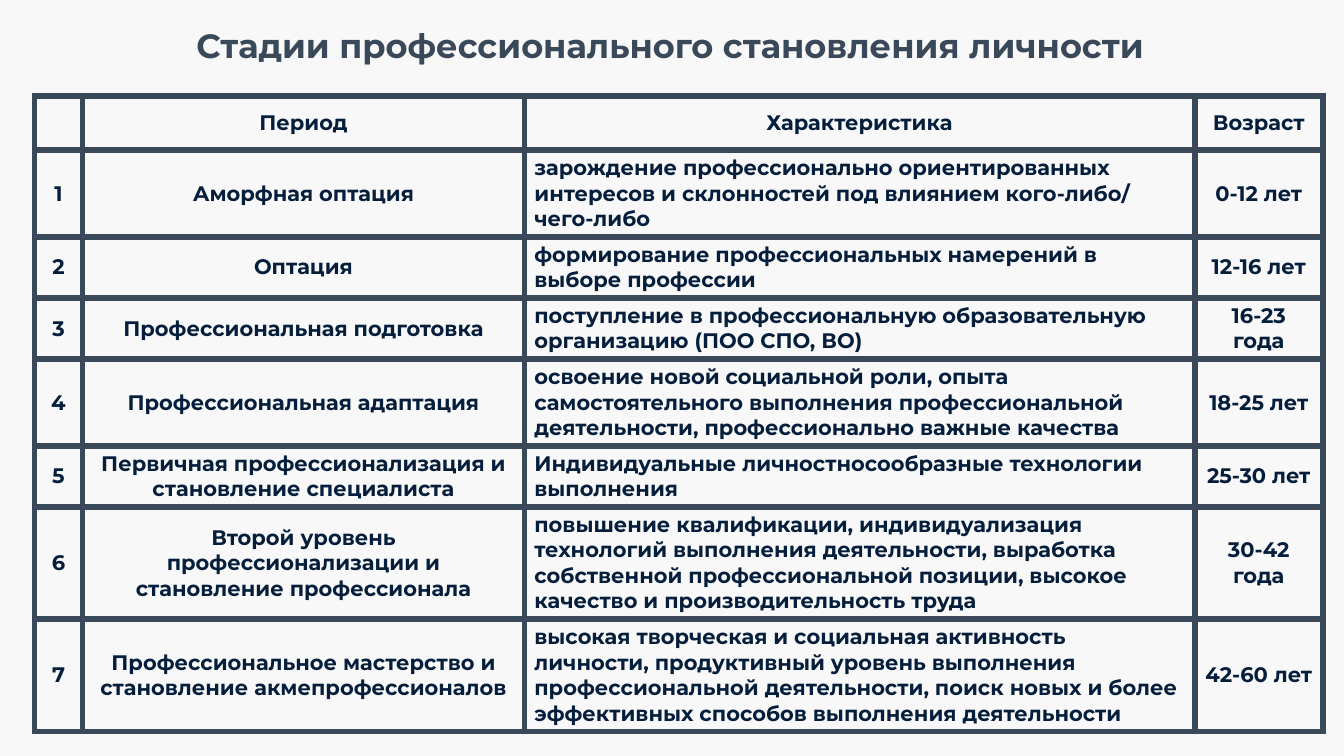
from dataclasses import astuple, dataclass

from lxml import etree
from pptx import Presentation
from pptx.dml.color import RGBColor
from pptx.enum.text import MSO_ANCHOR, PP_ALIGN
from pptx.oxml.ns import qn
from pptx.util import Inches, Pt

CENTER, LEFT = PP_ALIGN.CENTER, PP_ALIGN.LEFT
MIDDLE = MSO_ANCHOR.MIDDLE
TITLE_ONLY = 5


@dataclass(frozen=True)
class Theme:
    font: str = "Montserrat"
    background: str = "F8F8F8"
    accent: str = "394959"
    text: str = "051E3C"
    title_size: int = 24
    cell_size: int = 15
    border_width: float = 4.5


@dataclass(frozen=True)
class Stage:
    number: str
    period: str
    features: str
    age: str


THEME = Theme()
COLUMN_WIDTHS = (0.48, 4.38, 6.65, 1.27)
FEATURES_COLUMN = 2
ROW_HEIGHT = 0.54
HEADER = Stage("", "Период", "Характеристика", "Возраст")
STAGES = [
    Stage("1", "Аморфная оптация",
          "зарождение профессионально ориентированных интересов и склонностей "
          "под влиянием кого-либо/ чего-либо", "0-12 лет"),
    Stage("2", "Оптация",
          "формирование профессиональных намерений в выборе профессии", "12-16 лет"),
    Stage("3", "Профессиональная подготовка",
          "поступление в профессиональную образовательную организацию (ПОО СПО, ВО)",
          "16-23 года"),
    Stage("4", "Профессиональная адаптация",
          "освоение новой социальной роли, опыта самостоятельного выполнения "
          "профессиональной деятельности, профессионально важные качества", "18-25 лет"),
    Stage("5", "Первичная профессионализация и становление специалиста",
          "Индивидуальные личностносообразные технологии выполнения", "25-30 лет"),
    Stage("6", "Второй уровень профессионализации и становление профессионала",
          "повышение квалификации, индивидуализация технологий выполнения "
          "деятельности, выработка собственной профессиональной позиции, высокое "
          "качество и производительность труда", "30-42 года"),
    Stage("7", "Профессиональное мастерство и становление акмепрофессионалов",
          "высокая творческая и социальная активность личности, продуктивный уровень "
          "выполнения профессиональной деятельности, поиск новых и более эффективных "
          "способов выполнения деятельности", "42-60 лет"),
]


def format_paragraph(para, size: float, color: str, align) -> None:
    para.alignment = align
    para.font.name = THEME.font
    para.font.size = Pt(size)
    para.font.bold = True
    para.font.color.rgb = RGBColor.from_string(color)


def add_borders(cell) -> None:
    properties = cell._tc.get_or_add_tcPr()
    for side in ("a:lnL", "a:lnR", "a:lnT", "a:lnB"):
        line = etree.SubElement(properties, qn(side), w=str(Pt(THEME.border_width)))
        fill = etree.SubElement(line, qn("a:solidFill"))
        etree.SubElement(fill, qn("a:srgbClr"), val=THEME.accent)


def fill_cell(cell, text: str, align) -> None:
    add_borders(cell)
    cell.fill.solid()
    cell.fill.fore_color.rgb = RGBColor.from_string(THEME.background)
    cell.vertical_anchor = MIDDLE
    cell.text = text
    format_paragraph(cell.text_frame.paragraphs[0], THEME.cell_size, THEME.text, align)


def add_title(page, text: str) -> None:
    title = page.shapes.title
    title.left, title.top = Inches(0.17), Inches(0.2)
    title.width, title.height = Inches(12.95), Inches(0.5)
    title.text_frame.text = text
    title.text_frame.vertical_anchor = MIDDLE
    format_paragraph(title.text_frame.paragraphs[0], THEME.title_size, THEME.accent, CENTER)


def add_stage_table(page, rows: list[Stage]) -> None:
    table = page.shapes.add_table(
        len(rows), len(COLUMN_WIDTHS), Inches(0.34), Inches(0.95),
        Inches(sum(COLUMN_WIDTHS)), Inches(ROW_HEIGHT * len(rows))).table
    table.first_row = table.horz_banding = False
    for column, width in zip(table.columns, COLUMN_WIDTHS):
        column.width = Inches(width)
    for row_index, stage in enumerate(rows):
        for column_index, text in enumerate(astuple(stage)):
            is_feature = row_index > 0 and column_index == FEATURES_COLUMN
            fill_cell(table.cell(row_index, column_index), text,
                      LEFT if is_feature else CENTER)


def main() -> None:
    deck = Presentation()
    deck.slide_width, deck.slide_height = Inches(13.33), Inches(7.5)
    page = deck.slides.add_slide(deck.slide_layouts[TITLE_ONLY])
    page.background.fill.solid()
    page.background.fill.fore_color.rgb = RGBColor.from_string(THEME.background)

    # Heading
    add_title(page, "Стадии профессионального становления личности")

    # Table of stages; rows grow to fit their text
    add_stage_table(page, [HEADER, *STAGES])

    deck.save("out.pptx")


if __name__ == "__main__":
    main()
